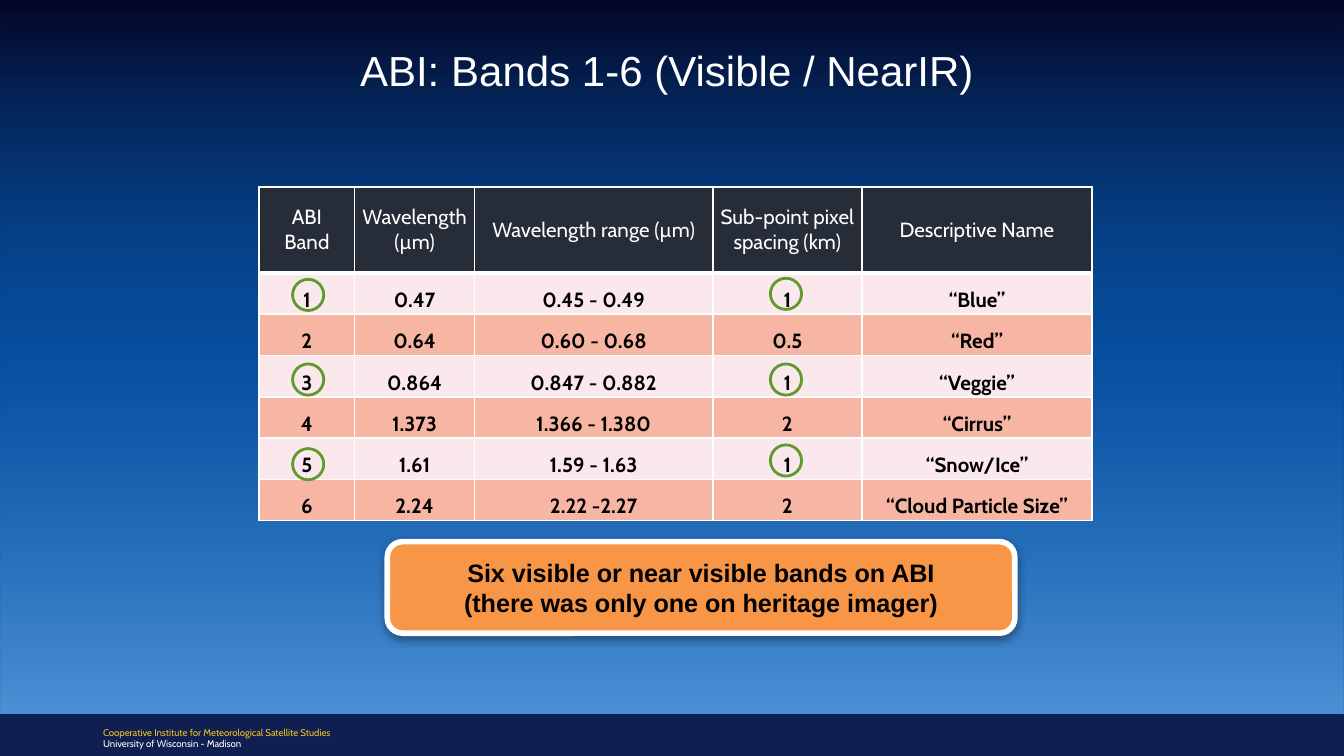
from lxml.etree import SubElement
from pptx import Presentation
from pptx.dml.color import RGBColor
from pptx.enum.shapes import MSO_SHAPE
from pptx.enum.text import MSO_ANCHOR, MSO_AUTO_SIZE, PP_ALIGN
from pptx.oxml import parse_xml
from pptx.oxml.ns import nsdecls, qn
from pptx.util import Cm, Pt

WHITE = RGBColor(0xFF, 0xFF, 0xFF)
BLACK = RGBColor(0x00, 0x00, 0x00)
NAVY = RGBColor(0x0F, 0x1F, 0x52)
GOLD = RGBColor(0xF2, 0xC3, 0x1A)
CHARCOAL = RGBColor(0x27, 0x2D, 0x38)
PINK = RGBColor(0xFB, 0xE8, 0xEC)
SALMON = RGBColor(0xF7, 0xB5, 0xA3)
ORANGE = RGBColor(0xF7, 0x96, 0x46)
GREEN = RGBColor(0x5E, 0x9B, 0x2C)
SKY_TOP = RGBColor(0x01, 0x02, 0x1E)
SKY_MIDDLE = RGBColor(0x00, 0x7E, 0xEB)
SKY_BOTTOM = RGBColor(0x61, 0xB6, 0xFF)

# Position and opacity in percent
SKY_STOPS = [(0, SKY_TOP, 85), (50, SKY_MIDDLE, 50), (100, SKY_BOTTOM, 75)]

COLUMN_WIDTHS = [1.8, 2.27, 4.5, 2.82, 4.35]
HEADER_HEIGHT, ROW_HEIGHT = 1.63, 0.78
BANDS = [
    ["ABI\nBand", "Wavelength (µm)", "Wavelength range (µm)",
     "Sub-point pixel spacing (km)", "Descriptive Name"],
    ["1", "0.47", "0.45 - 0.49", "1", "“Blue”"],
    ["2", "0.64", "0.60 - 0.68", "0.5", "“Red”"],
    ["3", "0.864", "0.847 - 0.882", "1", "“Veggie”"],
    ["4", "1.373", "1.366 - 1.380", "2", "“Cirrus”"],
    ["5", "1.61", "1.59 - 1.63", "1", "“Snow/Ice”"],
    ["6", "2.24", "2.22 -2.27", "2", "“Cloud Particle Size”"],
]
RING_SIZE = 0.59
RING_TOPS = {5.53: [5.28, 6.88, 8.48], 14.56: [5.26, 6.88, 8.41]}


class SlideBuilder:
    def __init__(self, presentation):
        self.slide = presentation.slides.add_slide(presentation.slide_layouts[5])
        background = self.slide.background.fill
        background.solid()
        background.fore_color.rgb = NAVY

    def set_text(self, frame, text, alignment=PP_ALIGN.LEFT, line_spacing=None,
                 color=WHITE, **font_format):
        """Put each line of text in its own paragraph."""
        frame.text = text
        for paragraph in frame.paragraphs:
            paragraph.alignment = alignment
            if line_spacing:
                paragraph.line_spacing = line_spacing
            for name, value in font_format.items():
                setattr(paragraph.font, name, value)
            paragraph.font.color.rgb = color

    def title(self, text, left, top, width, height):
        title = self.slide.shapes.title
        box = {"left": left, "top": top, "width": width, "height": height}
        for name, value in box.items():
            setattr(title, name, Cm(value))
        frame = title.text_frame
        frame.word_wrap = False
        frame.auto_size = MSO_AUTO_SIZE.SHAPE_TO_FIT_TEXT
        frame.vertical_anchor = MSO_ANCHOR.TOP
        self.set_text(frame, text, name="Arial", size=Pt(22.5), bold=False)

    def shape(self, kind, left, top, width, height, fill=None, line=None, line_width=1):
        shape = self.slide.shapes.add_shape(kind, Cm(left), Cm(top), Cm(width), Cm(height))
        shape.shadow.inherit = False
        if fill is None:
            shape.fill.background()
        else:
            shape.fill.solid()
            shape.fill.fore_color.rgb = fill
        if line is None:
            shape.line.fill.background()
        else:
            shape.line.color.rgb = line
            shape.line.width = Pt(line_width)
        return shape

    def sky(self, left, top, width, height):
        """Draw the translucent gradient behind everything else."""
        shape = self.shape(MSO_SHAPE.RECTANGLE, left, top, width, height)
        stops = "".join(
            f'<a:gs pos="{position * 1000}"><a:srgbClr val="{color}">'
            f'<a:alpha val="{opacity * 1000}"/></a:srgbClr></a:gs>'
            for position, color, opacity in SKY_STOPS)
        gradient = parse_xml(
            f'<a:gradFill {nsdecls("a")} rotWithShape="1"><a:gsLst>{stops}</a:gsLst>'
            '<a:lin ang="5400000" scaled="0"/></a:gradFill>')
        properties = shape.element.spPr
        properties.replace(properties.find(qn("a:noFill")), gradient)
        self.slide.shapes.title.element.addprevious(shape.element)

    def footer(self, lines, left, top, width, height):
        box = self.slide.shapes.add_textbox(Cm(left), Cm(top), Cm(width), Cm(height))
        frame = box.text_frame
        frame.word_wrap = True
        self.set_text(frame, "\n".join(lines), name="Cabin", size=Pt(5.2))
        frame.paragraphs[0].font.color.rgb = GOLD

    def cell_borders(self, cell, bottom_width):
        properties = cell._tc.get_or_add_tcPr()
        for side, width in {"L": 1, "R": 1, "T": 1, "B": bottom_width}.items():
            border = SubElement(properties, qn(f"a:ln{side}"), w=str(Pt(width)))
            fill = SubElement(border, qn("a:solidFill"))
            SubElement(fill, qn("a:srgbClr"), val=str(WHITE))

    def table(self, rows, left, top):
        height = HEADER_HEIGHT + ROW_HEIGHT * (len(rows) - 1)
        table = self.slide.shapes.add_table(
            len(rows), len(COLUMN_WIDTHS), Cm(left), Cm(top),
            Cm(sum(COLUMN_WIDTHS)), Cm(height)).table
        for column, width in zip(table.columns, COLUMN_WIDTHS):
            column.width = Cm(width)
        for index, values in enumerate(rows):
            is_header = index == 0
            table.rows[index].height = Cm(HEADER_HEIGHT if is_header else ROW_HEIGHT)
            fill = CHARCOAL if is_header else (SALMON, PINK)[index % 2]
            for cell, value in zip(table.rows[index].cells, values):
                self.cell_borders(cell, 3 if is_header else 1)
                cell.fill.solid()
                cell.fill.fore_color.rgb = fill
                cell.vertical_anchor = MSO_ANCHOR.MIDDLE
                for side in ("left", "right", "top", "bottom"):
                    setattr(cell, f"margin_{side}", Cm(0.04))
                self.set_text(cell.text_frame, value, PP_ALIGN.CENTER,
                              None if is_header else 1.5, WHITE if is_header else BLACK,
                              name="Cabin", size=Pt(11), bold=not is_header)

    def callout(self, lines, left, top, width, height):
        shape = self.shape(MSO_SHAPE.ROUNDED_RECTANGLE, left, top, width, height,
                           ORANGE, WHITE, 3)
        effects = shape.element.spPr.find(qn("a:effectLst"))
        shadow = SubElement(effects, qn("a:outerShdw"), blurRad=str(Pt(5)),
                            dist=str(Pt(1.6)), dir="5400000", rotWithShape="0")
        color = SubElement(shadow, qn("a:srgbClr"), val=str(BLACK))
        SubElement(color, qn("a:alpha"), val="38000")
        shape.text_frame.vertical_anchor = MSO_ANCHOR.MIDDLE
        self.set_text(shape.text_frame, "\n".join(lines), PP_ALIGN.CENTER, color=BLACK,
                      name="Arial", size=Pt(13.5), bold=True)

    def ring(self, left, top):
        self.shape(MSO_SHAPE.OVAL, left, top, RING_SIZE, RING_SIZE,
                   line=GREEN, line_width=1.5)


def main():
    presentation = Presentation()
    presentation.slide_width = Cm(25.4)
    presentation.slide_height = Cm(14.29)
    builder = SlideBuilder(presentation)
    builder.sky(0, -0.02, 25.4, 13.5)
    builder.footer(["Cooperative Institute for Meteorological Satellite Studies",
                    "University of Wisconsin - Madison"], 1.7, 13.61, 7.42, 0.71)
    builder.title("ABI: Bands 1-6 (Visible / NearIR)", 6.55, 0.71, 12.42, 1.22)
    builder.table(BANDS, 4.9, 3.53)
    builder.callout(["Six visible or near visible bands on ABI",
                     "(there was only one on heritage imager)"], 7.32, 10.24, 11.86, 1.73)
    for left, tops in RING_TOPS.items():
        for top in tops:
            builder.ring(left, top)
    presentation.save("out.pptx")


if __name__ == "__main__":
    main()
